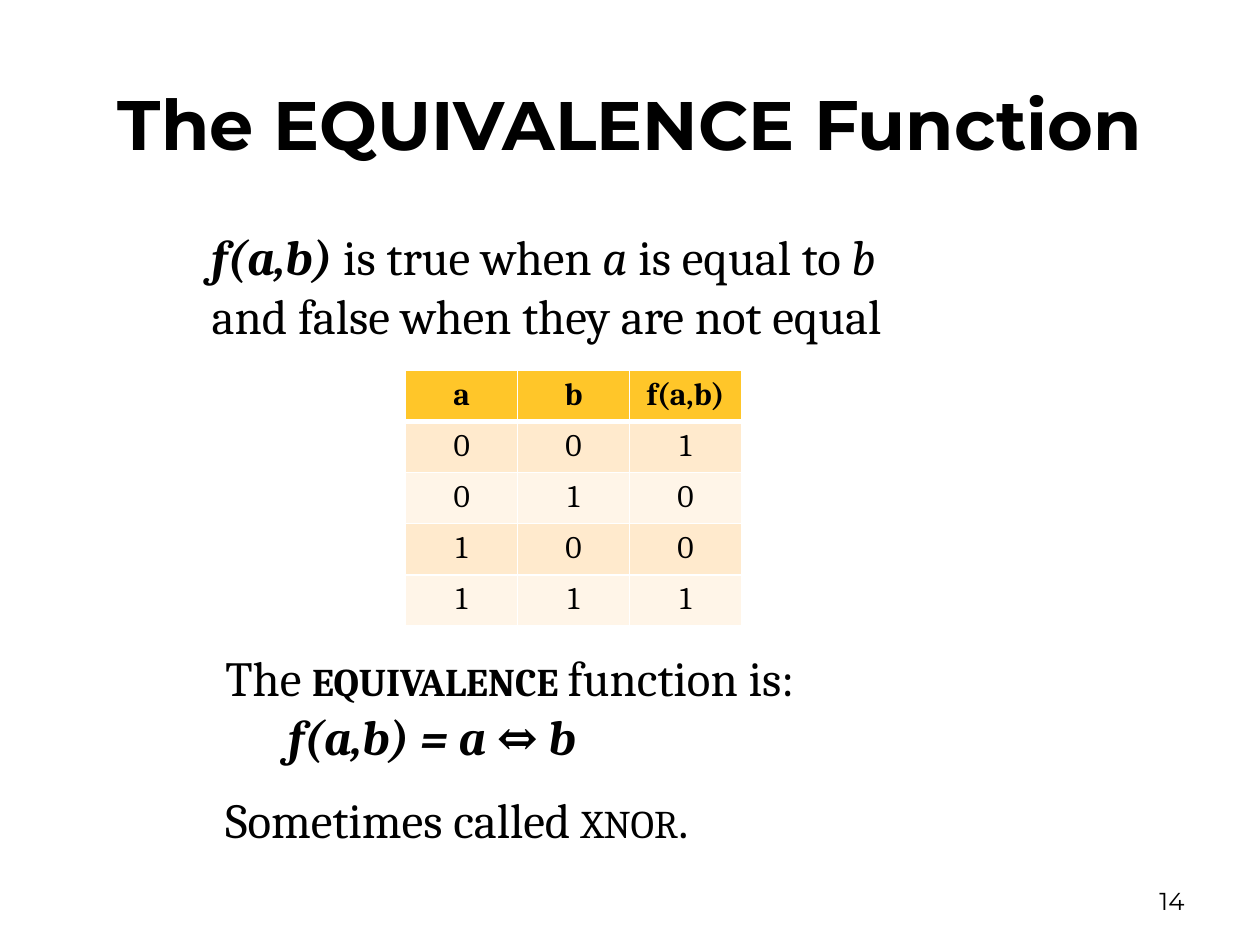
from dataclasses import dataclass

from lxml.etree import SubElement
from pptx import Presentation
from pptx.dml.color import RGBColor
from pptx.enum.text import MSO_ANCHOR, MSO_AUTO_SIZE, PP_ALIGN
from pptx.oxml.ns import qn
from pptx.util import Pt

HUES = {
    "ink": "000000",
    "line": "FFFFFF",
    "head": "FFC629",
    "odd": "FFEACD",
    "even": "FFF5E8",
}
SANS, SERIF = "Montserrat", "Cambria"
BODY = 28


@dataclass
class Box:
    left: float
    top: float
    width: float
    height: float

    def spots(self):
        return [Pt(n) for n in (self.left, self.top, self.width, self.height)]


def hue(name):
    return RGBColor.from_string(HUES[name])


def add_run(para, text, *, size=BODY, face=SERIF, bold=False,
            slant=False, small=False):
    run = para.add_run()
    run.text = text
    font = run.font
    font.name, font.size = face, Pt(size)
    font.bold, font.italic = bold, slant
    font.color.rgb = hue("ink")
    if small:
        run._r.get_or_add_rPr().set("cap", "small")


def add_line(para, parts):
    """Write (text, format) pairs; None stands for a line break."""
    for part in parts:
        if part is None:
            para.add_line_break()
        else:
            text, form = part
            add_run(para, text, **form)


def add_box(slide, box: Box, lines, pad=(8.64, 4.32)):
    frame = slide.shapes.add_textbox(*box.spots()).text_frame
    frame.word_wrap = True
    frame.margin_left = frame.margin_right = Pt(pad[0])
    frame.margin_top = frame.margin_bottom = Pt(pad[1])
    for i, parts in enumerate(lines):
        para = frame.add_paragraph() if i else frame.paragraphs[0]
        if i:
            para.space_before = Pt(BODY / 2)
        add_line(para, parts)
    return frame


def set_edge(cell, side, width):
    edge = SubElement(cell._tc.get_or_add_tcPr(), qn(f"a:ln{side}"),
                      w=str(Pt(width)))
    fill = SubElement(edge, qn("a:solidFill"))
    SubElement(fill, qn("a:srgbClr"), val=HUES["line"])


def add_grid(slide, box: Box, rows):
    grid = slide.shapes.add_table(len(rows), len(rows[0]), *box.spots()).table
    for col in grid.columns:
        col.width = Pt(box.width / len(rows[0]))
    for r, row in enumerate(rows):
        grid.rows[r].height = Pt(box.height / len(rows))
        tone = "head" if r == 0 else "odd" if r % 2 else "even"
        for c, text in enumerate(row):
            cell = grid.cell(r, c)
            # A thick rule parts the header from the body
            for side in "LRTB":
                thick = (r, side) in ((0, "B"), (1, "T"))
                set_edge(cell, side, 3 if thick else 1)
            cell.fill.solid()
            cell.fill.fore_color.rgb = hue(tone)
            para = cell.text_frame.paragraphs[0]
            para.alignment = PP_ALIGN.CENTER
            add_run(para, text, size=18, bold=r == 0)


def main():
    deck = Presentation()
    deck.slide_width, deck.slide_height = Pt(720), Pt(540)
    slide = deck.slides.add_slide(deck.slide_layouts[5])

    # Title
    title = slide.shapes.title
    title.left, title.top, title.width, title.height = Box(
        36, 21.6, 648, 90).spots()
    frame = title.text_frame
    frame.auto_size = MSO_AUTO_SIZE.NONE
    frame.vertical_anchor = MSO_ANCHOR.MIDDLE
    para = frame.paragraphs[0]
    para.alignment = PP_ALIGN.CENTER
    head = dict(size=40, face=SANS, bold=True)
    add_line(para, [
        ("The ", head),
        ("equivalence ", dict(head, size=49, small=True)),
        ("Function", head),
    ])

    # Definition
    plain, slant = {}, dict(slant=True)
    strong = dict(bold=True, slant=True)
    add_box(slide, Box(112.3, 125.3, 539.3, 77), [[
        ("f(a,b)", strong), (" is true when ", plain), ("a", slant),
        (" is equal to ", plain), ("b", slant), None,
        ("and false when they are not equal", plain),
    ]])

    # Truth table
    pairs = [(a, b) for a in (0, 1) for b in (0, 1)]
    rows = [("a", "b", "f(a,b)")]
    rows += [(str(a), str(b), str(int(a == b))) for a, b in pairs]
    add_grid(slide, Box(231.8, 211.7, 192, 146), rows)

    # Formula and other name
    add_box(slide, Box(120.2, 365.8, 524.2, 127.4), [
        [("The ", plain), ("equivalence ", dict(bold=True, small=True)),
         ("function is:", plain), None,
         ("\t", plain), ("f(a,b) = a ", strong), ("⇔ ", dict(bold=True)),
         ("b", strong)],
        [("Sometimes called ", plain), ("xnor", dict(small=True)),
         (".", plain)],
    ])

    # Slide number
    foot = add_box(slide, Box(516.2, 500.4, 167.8, 28.8),
                   [[("14", dict(size=14, face=SANS))]], pad=(7.2, 3.6))
    foot.vertical_anchor = MSO_ANCHOR.MIDDLE
    foot.paragraphs[0].alignment = PP_ALIGN.RIGHT

    deck.save("out.pptx")


if __name__ == "__main__":
    main()
